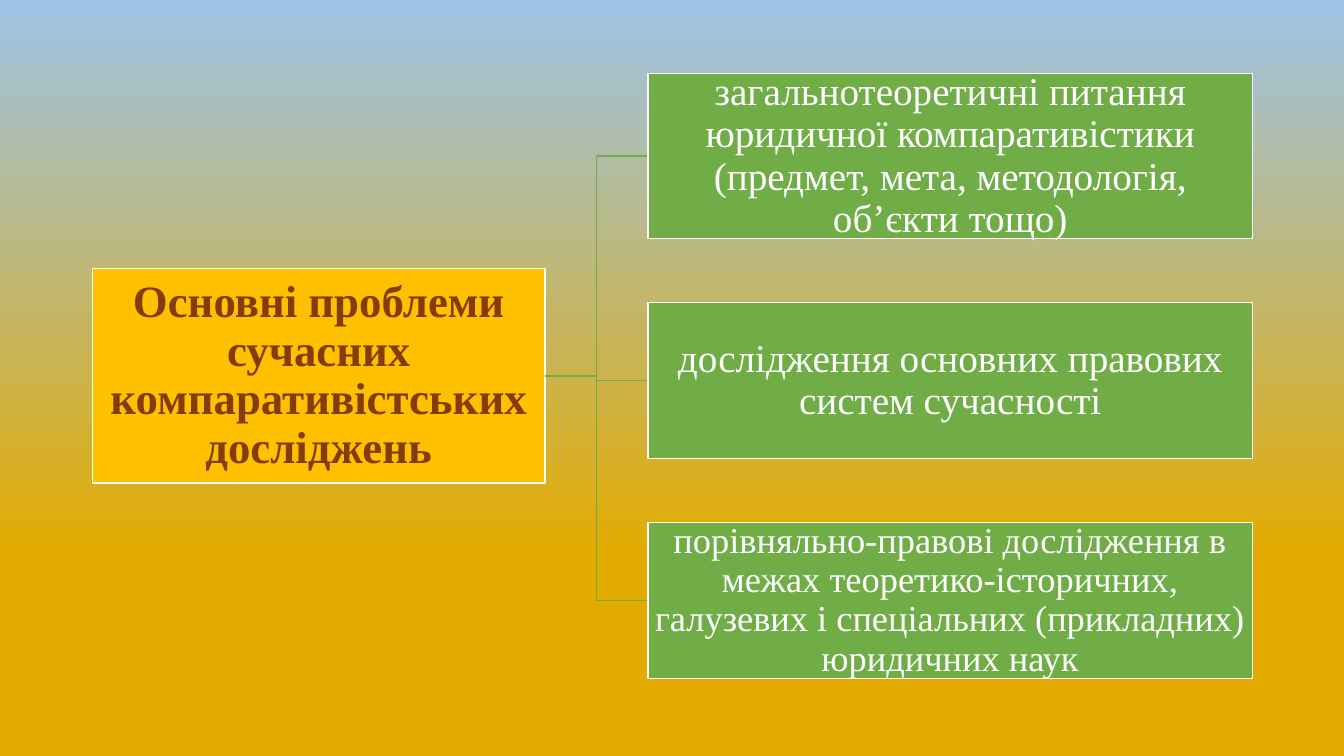
from pptx import Presentation
from pptx.dml.color import RGBColor
from pptx.enum.shapes import MSO_SHAPE
from pptx.enum.text import MSO_ANCHOR, PP_ALIGN
from pptx.util import Pt

ROOT_TEXT = "Основні проблеми сучасних компаративістських досліджень"
# text, font size, box height
BRANCHES = [
    ("загальнотеоретичні питання юридичної компаративістики "
     "(предмет, мета, методологія, об’єкти тощо)", 28, 118.1),
    ("дослідження основних правових систем сучасності", 28, 111.6),
    ("порівняльно-правові дослідження в межах теоретико-історичних, "
     "галузевих і спеціальних (прикладних) юридичних наук", 26, 111.6),
]
BACKGROUND = [(0.26, "E3AB00"), (1, "9DC3E6")]  # from bottom to top
GOLD, BROWN, GREEN, WHITE = "FFC000", "843C0B", "70AD47", "FFFFFF"
FONT = "Times New Roman"

ROOT_LEFT, ROOT_TOP, ROOT_WIDTH, ROOT_HEIGHT = 66, 192, 323.5, 153
BRANCH_LEFT, BRANCH_TOP, BRANCH_WIDTH, BRANCH_GAP = 463, 52.5, 431.5, 45.4
INSET = 1.5


def color(hex_string):
    return RGBColor.from_string(hex_string)


def paint_background(slide):
    fill = slide.background.fill
    fill.gradient()
    fill.gradient_angle = 90
    for stop, (position, hex_string) in zip(fill.gradient_stops, BACKGROUND):
        stop.position = position
        stop.color.rgb = color(hex_string)


def style_line(shape, hex_string):
    shape.shadow.inherit = False
    shape.line.color.rgb = color(hex_string)
    shape.line.width = Pt(1)


def add_box(slide, bounds, text, size, fill, text_color, bold=False):
    box = slide.shapes.add_shape(MSO_SHAPE.RECTANGLE, *map(Pt, bounds))
    box.fill.solid()
    box.fill.fore_color.rgb = color(fill)
    style_line(box, WHITE)
    frame = box.text_frame
    frame.text = text
    frame.word_wrap = True
    frame.vertical_anchor = MSO_ANCHOR.MIDDLE
    frame.margin_left = frame.margin_right = Pt(INSET)
    frame.margin_top = frame.margin_bottom = Pt(INSET)
    paragraph = frame.paragraphs[0]
    paragraph.alignment = PP_ALIGN.CENTER
    paragraph.line_spacing = 0.9
    font = paragraph.runs[0].font
    font.name, font.size, font.bold = FONT, Pt(size), bold
    font.color.rgb = color(text_color)


def add_elbow(slide, branch_middle):
    """Draw the bent line from the root box to one branch."""
    start_x, start_y = ROOT_LEFT + ROOT_WIDTH, ROOT_TOP + ROOT_HEIGHT / 2
    bend_x = (start_x + BRANCH_LEFT) / 2
    corners = [(bend_x, start_y), (bend_x, branch_middle),
               (BRANCH_LEFT, branch_middle)]
    builder = slide.shapes.build_freeform(Pt(start_x), Pt(start_y))
    builder.add_line_segments([(Pt(x), Pt(y)) for x, y in corners], close=False)
    elbow = builder.convert_to_shape()
    elbow.fill.background()
    style_line(elbow, GREEN)


def main():
    presentation = Presentation()
    presentation.slide_width, presentation.slide_height = Pt(960), Pt(540)
    slide = presentation.slides.add_slide(presentation.slide_layouts[6])
    paint_background(slide)
    add_box(slide, (ROOT_LEFT, ROOT_TOP, ROOT_WIDTH, ROOT_HEIGHT),
            ROOT_TEXT, 32, GOLD, BROWN, bold=True)
    top = BRANCH_TOP
    for text, size, height in BRANCHES:
        add_elbow(slide, top + height / 2)
        add_box(slide, (BRANCH_LEFT, top, BRANCH_WIDTH, height),
                text, size, GREEN, WHITE)
        top += height + BRANCH_GAP
    presentation.save("out.pptx")


if __name__ == "__main__":
    main()
